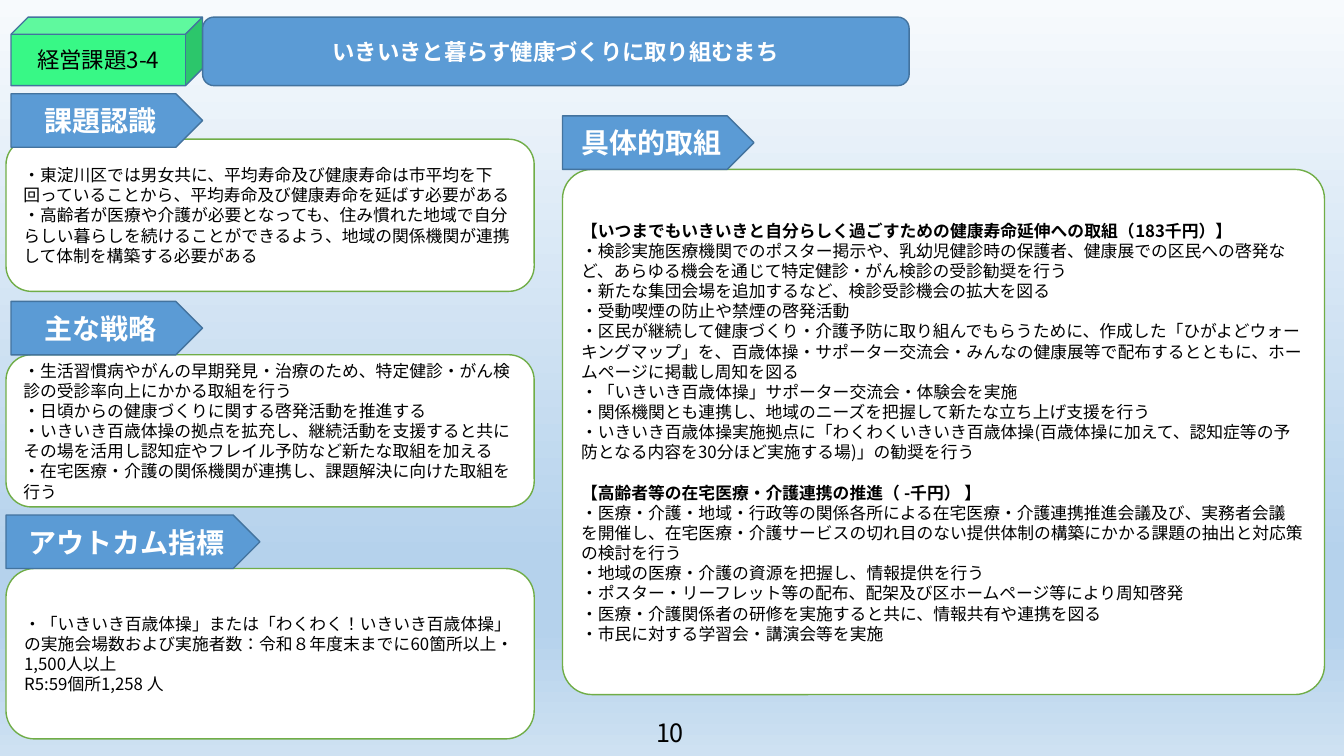
"""Build the slide on management issue 3-4, healthy living in the ward."""
from copy import deepcopy
from dataclasses import dataclass

from lxml import etree
from pptx import Presentation
from pptx.dml.color import RGBColor
from pptx.enum import lang, shapes, text
from pptx.oxml.ns import qn
from pptx.slide import Slide
from pptx.text.text import TextFrame
from pptx.util import Pt

FONT = "Noto Sans CJK JP"
WHITE = RGBColor(0xFF, 0xFF, 0xFF)
BLACK = RGBColor(0x00, 0x00, 0x00)
BLUE = RGBColor(0x5B, 0x9B, 0xD5)
BLUE_EDGE = RGBColor(0x43, 0x73, 0x9E)
GREEN = RGBColor(0x38, 0xF8, 0x86)
GREEN_EDGE = RGBColor(0x70, 0xAD, 0x47)
SKY_PALE = RGBColor(0xF7, 0xFA, 0xFD)
SKY = RGBColor(0xB5, 0xD2, 0xEC)
SKY_LIGHT = RGBColor(0xCE, 0xE1, 0xF2)
SKY_STOPS = [(0, SKY_PALE), (0.74, SKY), (0.83, SKY), (1, SKY_LIGHT)]

ROUND = shapes.MSO_SHAPE.ROUNDED_RECTANGLE
ARROW = shapes.MSO_SHAPE.PENTAGON
CUBE = shapes.MSO_SHAPE.CUBE
LEFT = text.PP_ALIGN.LEFT
CENTER = text.PP_ALIGN.CENTER

COLUMN_LEFT, COLUMN_WIDTH = 4.3, 377.3
ACTIONS_LEFT = 401.8
ARROW_WIDTH, ARROW_HEIGHT = 136.8, 38.2
BANNER_TOP, BANNER_HEIGHT = 12.2, 49
LINE_HEIGHT = 14.4


@dataclass(frozen=True)
class Style:
    """Colours and lettering of one kind of box."""

    fill: RGBColor
    edge: RGBColor
    color: RGBColor
    size: float
    bold: bool
    align: text.PP_ALIGN


@dataclass(frozen=True)
class Box:
    """A preset shape with its place in points and its lines of text."""

    kind: shapes.MSO_SHAPE
    style: Style
    left: float
    top: float
    width: float
    height: float
    lines: tuple[str, ...]
    corner: float | None = None


PANEL = Style(WHITE, GREEN_EDGE, BLACK, 12, False, LEFT)
HEADING = Style(BLUE, BLUE_EDGE, WHITE, 20, True, CENTER)
TITLE = Style(BLUE, BLUE_EDGE, WHITE, 16, True, CENTER)
LABEL = Style(GREEN, BLUE_EDGE, BLACK, 16, False, CENTER)

ISSUES = (
    "・東淀川区では男女共に、平均寿命及び健康寿命は市平均を下回っていることから、平均寿命及び健康寿命を延ばす必要がある",
    "・高齢者が医療や介護が必要となっても、住み慣れた地域で自分らしい暮らしを続けることができるよう、地域の関係機関が連携して体制を構築する必要がある",
)
STRATEGIES = (
    "・生活習慣病やがんの早期発見・治療のため、特定健診・がん検診の受診率向上にかかる取組を行う",
    "・日頃からの健康づくりに関する啓発活動を推進する",
    "・いきいき百歳体操の拠点を拡充し、継続活動を支援すると共に",
    "その場を活用し認知症やフレイル予防など新たな取組を加える",
    "・在宅医療・介護の関係機関が連携し、課題解決に向けた取組を行う",
)
OUTCOMES = (
    "・「いきいき百歳体操」または「わくわく！いきいき百歳体操」の実施会場数および実施者数：令和８年度末までに60箇所以上・1,500人以上",
    "R5:59個所1,258 人",
)
ACTIONS = (
    "【いつまでもいきいきと自分らしく過ごすための健康寿命延伸への取組（183千円）】",
    "・検診実施医療機関でのポスター掲示や、乳幼児健診時の保護者、健康展での区民への啓発な",
    "ど、あらゆる機会を通じて特定健診・がん検診の受診勧奨を行う",
    "・新たな集団会場を追加するなど、検診受診機会の拡大を図る",
    "・受動喫煙の防止や禁煙の啓発活動",
    "・区民が継続して健康づくり・介護予防に取り組んでもらうために、作成した「ひがよどウォーキングマップ」を、百歳体操・サポーター交流会・みんなの健康展等で配布するとともに、ホームページに掲載し周知を図る",
    "・「いきいき百歳体操」サポーター交流会・体験会を実施",
    "・関係機関とも連携し、地域のニーズを把握して新たな立ち上げ支援を行う",
    "・いきいき百歳体操実施拠点に「わくわくいきいき百歳体操(百歳体操に加えて、認知症等の予防となる内容を30分ほど実施する場)」の勧奨を行う",
    "【高齢者等の在宅医療・介護連携の推進（ -千円） 】",
    "・医療・介護・地域・行政等の関係各所による在宅医療・介護連携推進会議及び、実務者会議",
    "を開催し、在宅医療・介護サービスの切れ目のない提供体制の構築にかかる課題の抽出と対応策の検討を行う",
    "・地域の医療・介護の資源を把握し、情報提供を行う",
    "・ポスター・リーフレット等の配布、配架及び区ホームページ等により周知啓発",
    "・医療・介護関係者の研修を実施すると共に、情報共有や連携を図る",
    "・市民に対する学習会・講演会等を実施",
)


def panel(left: float, top: float, width: float, height: float,
          lines: tuple[str, ...], corner: float | None = None) -> Box:
    """Describe a white rounded panel."""
    return Box(ROUND, PANEL, left, top, width, height, lines, corner)


def heading(left: float, top: float, line: str, width: float = ARROW_WIDTH) -> Box:
    """Describe a blue heading arrow."""
    return Box(ARROW, HEADING, left, top, width, ARROW_HEIGHT, (line,))


BOXES = (
    panel(COLUMN_LEFT, 99.4, COLUMN_WIDTH, 108.7, ISSUES),
    panel(COLUMN_LEFT, 253.4, COLUMN_WIDTH, 108.7, STRATEGIES),
    panel(COLUMN_LEFT, 406.1, COLUMN_WIDTH, 121.7, OUTCOMES),
    panel(ACTIONS_LEFT, 121, 544.3, 375.1, ACTIONS, 0.056),
    heading(7.9, 67, "課題認識"),
    heading(7.9, 215.3, "主な戦略"),
    heading(COLUMN_LEFT, 367.9, "アウトカム指標", 181.4),
    heading(ACTIONS_LEFT, 82.8, "具体的取組"),
    Box(CUBE, LABEL, 7.9, BANNER_TOP, ARROW_WIDTH, BANNER_HEIGHT, ("経営課題3-4",)),
    Box(ROUND, TITLE, 144.7, BANNER_TOP, 504.7, BANNER_HEIGHT,
        ("いきいきと暮らす健康づくりに取り組むまち",)),
)


def write(tf: TextFrame, lines: tuple[str, ...], style: Style) -> None:
    """Set the lines, with bracketed subheadings in bold and spaced apart."""
    tf.text = "\n".join(lines)
    for i, p in enumerate(tf.paragraphs):
        subheading = p.text.startswith("【")
        p.alignment = style.align
        if subheading and i:
            p.space_before = Pt(LINE_HEIGHT)
        for r in p.runs:
            r.font.name = FONT
            r.font.size = Pt(style.size)
            r.font.bold = style.bold or subheading
            r.font.color.rgb = style.color
            r.font.language_id = lang.MSO_LANGUAGE_ID.JAPANESE
            etree.SubElement(r._r.get_or_add_rPr(), qn("a:ea"), typeface=FONT)


def draw(s: Slide, box: Box) -> None:
    """Draw one box on the slide."""
    sp = s.shapes.add_shape(box.kind, Pt(box.left), Pt(box.top),
                            Pt(box.width), Pt(box.height))
    sp.shadow.inherit = False
    sp.fill.solid()
    sp.fill.fore_color.rgb = box.style.fill
    sp.line.color.rgb = box.style.edge
    sp.line.width = Pt(1)
    if box.corner is not None:
        sp.adjustments[0] = box.corner
    tf = sp.text_frame
    tf.word_wrap = True
    tf.vertical_anchor = text.MSO_ANCHOR.MIDDLE
    write(tf, box.lines, box.style)


def paint_sky(s: Slide) -> None:
    """Fill the background with the vertical blue gradient."""
    fill = s.background.fill
    fill.gradient()
    fill.gradient_angle = 270
    stops = s._element.find(".//" + qn("a:gsLst"))
    while len(stops) < len(SKY_STOPS):
        stops.append(deepcopy(stops[0]))
    for stop, (position, color) in zip(fill.gradient_stops, SKY_STOPS):
        stop.position = position
        stop.color.rgb = color


def main() -> None:
    """Build and save the slide."""
    prs = Presentation()
    prs.slide_width, prs.slide_height = Pt(960), Pt(540)
    s = prs.slides.add_slide(prs.slide_layouts[6])
    paint_sky(s)
    for box in BOXES:
        draw(s, box)
    number = s.shapes.add_textbox(Pt(461.5), Pt(509), Pt(36.7), Pt(28.8))
    number.text_frame.word_wrap = True
    write(number.text_frame, ("10",), Style(WHITE, WHITE, BLACK, 18, False, LEFT))
    prs.save("out.pptx")


if __name__ == "__main__":
    main()
